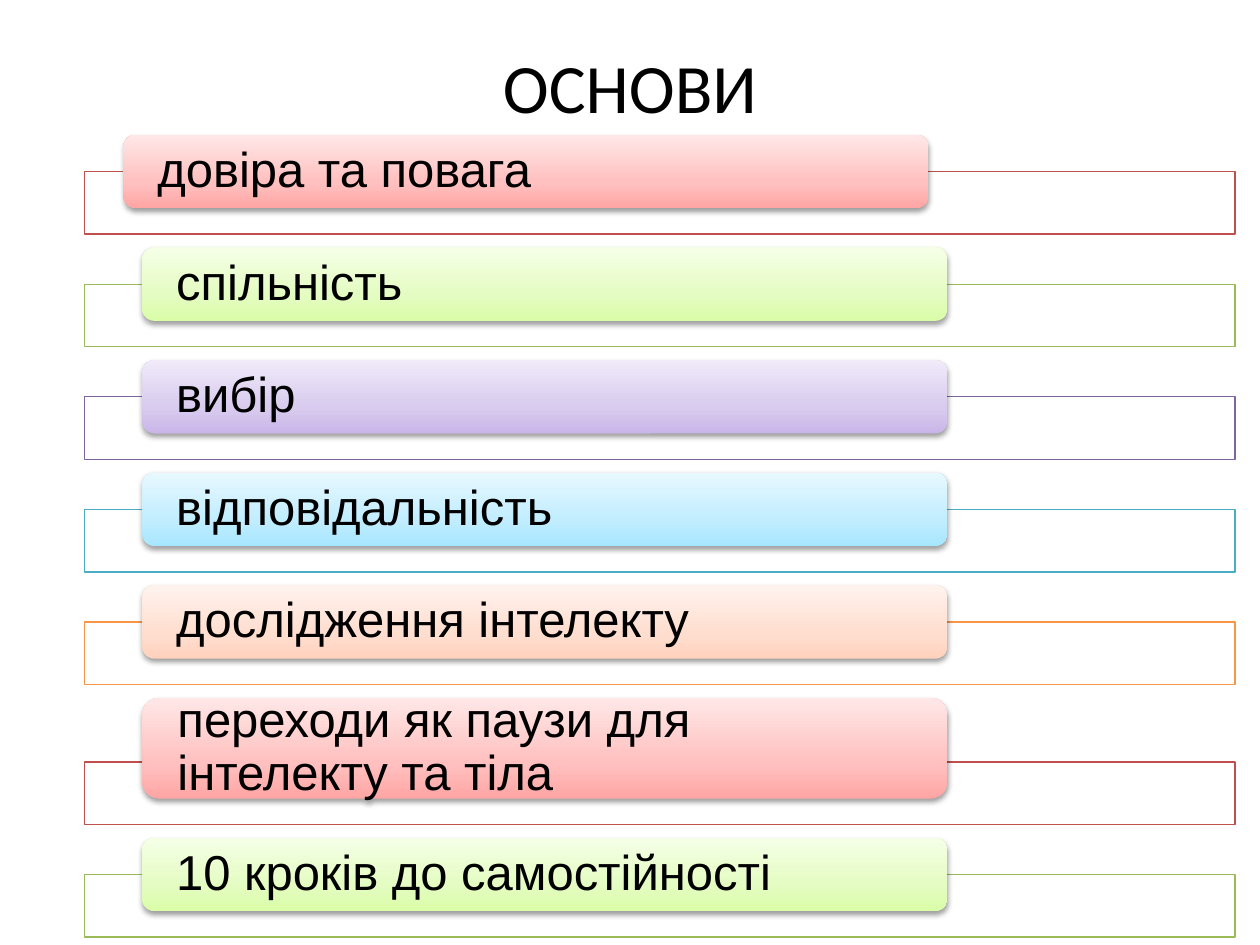
from copy import deepcopy

from lxml import etree
from pptx import Presentation
from pptx.dml.color import RGBColor
from pptx.enum.shapes import MSO_SHAPE
from pptx.enum.text import MSO_ANCHOR, PP_ALIGN
from pptx.oxml.ns import qn
from pptx.util import Cm, Pt

RECTANGLE = MSO_SHAPE.RECTANGLE
ROUNDED = MSO_SHAPE.ROUNDED_RECTANGLE
MIDDLE = MSO_ANCHOR.MIDDLE
LEFT, CENTER = PP_ALIGN.LEFT, PP_ALIGN.CENTER

COLORS = {
    "text": "000000",
    "frame": "FFFFFF",
    "shadow": "000000",
    "red": ("C0504D", "FFA6A5", "FFC0BF", "FFE7E7"),
    "green": ("9BBB59", "DAFDA7", "E4FCC2", "F5FFE7"),
    "purple": ("8064A2", "C9B5E8", "D8CBEE", "F0EAF9"),
    "blue": ("4BACC6", "A7E6FF", "C1EDFF", "E7F8FF"),
    "orange": ("F79646", "FFD2BD", "FFDED0", "FFF2ED"),
}
STOP_POSITIONS = (0, 0.35, 1)

PILL_WIDTH, PILL_HEIGHT, TALL_PILL_HEIGHT = 16.23, 1.48, 2.03
FIRST_INDENT, INDENT = 0.79, 1.17
FRAME_HEIGHT, OVERLAP, GAP = 1.26, 0.74, 0.27

PRINCIPLES = [
    ("довіра та повага", "red", FIRST_INDENT, PILL_HEIGHT),
    ("спільність", "green", INDENT, PILL_HEIGHT),
    ("вибір", "purple", INDENT, PILL_HEIGHT),
    ("відповідальність", "blue", INDENT, PILL_HEIGHT),
    ("дослідження інтелекту", "orange", INDENT, PILL_HEIGHT),
    ("переходи як паузи для інтелекту та тіла", "red", INDENT, TALL_PILL_HEIGHT),
    ("10 кроків до самостійності", "green", INDENT, PILL_HEIGHT),
]


def write_text(shape, text, font, size, align=LEFT, spacing=1.0, side=0.25, edge=0.25):
    frame = shape.text_frame
    frame.word_wrap = True
    frame.vertical_anchor = MIDDLE
    frame.margin_left = frame.margin_right = Cm(side)
    frame.margin_top = frame.margin_bottom = Cm(edge)
    paragraph = frame.paragraphs[0]
    paragraph.alignment = align
    paragraph.line_spacing = spacing
    run = paragraph.add_run()
    run.text = text
    run.font.name = font
    run.font.size = Pt(size)
    run.font.color.rgb = RGBColor.from_string(COLORS["text"])


def add_color(parent, color, percent):
    node = etree.SubElement(parent, qn("a:srgbClr"), val=color)
    etree.SubElement(node, qn("a:alpha"), val=str(percent * 1000))


def fill_gradient(shape, colors):
    shape.fill.gradient()
    shape.fill.gradient_angle = 90
    stop_list = shape._element.spPr.find(".//" + qn("a:gsLst"))
    stop_list.insert(1, deepcopy(stop_list[0]))
    for stop, position, color in zip(shape.fill.gradient_stops, STOP_POSITIONS, colors):
        stop.position = position
        stop.color.rgb = RGBColor.from_string(color)


def add_shadow(shape):
    shape.shadow.inherit = False
    effects = shape._element.spPr.find(qn("a:effectLst"))
    shadow = etree.SubElement(
        effects, qn("a:outerShdw"), blurRad=str(Pt(3.1)), dist=str(Pt(1.6)),
        dir="5400000", rotWithShape="0")
    add_color(shadow, COLORS["shadow"], 38)


def add_frame(slide, left, top, width, height, line_color):
    shape = slide.shapes.add_shape(RECTANGLE, Cm(left), Cm(top), Cm(width), Cm(height))
    shape.shadow.inherit = False
    shape.fill.solid()
    shape.fill.fore_color.rgb = RGBColor.from_string(COLORS["frame"])
    solid = shape._element.spPr.find(qn("a:solidFill"))
    solid.clear()
    add_color(solid, COLORS["frame"], 90)
    shape.line.color.rgb = RGBColor.from_string(line_color)
    shape.line.width = Pt(0.75)


def add_pill(slide, left, top, width, height, text, colors):
    shape = slide.shapes.add_shape(ROUNDED, Cm(left), Cm(top), Cm(width), Cm(height))
    shape.line.fill.background()
    fill_gradient(shape, colors)
    add_shadow(shape)
    write_text(shape, text, "Arial", 28, spacing=0.9, side=0.61, edge=0)


def add_title(slide, left, top, width, height):
    shape = slide.shapes.add_textbox(Cm(left), Cm(top), Cm(width), Cm(height))
    write_text(shape, "ОСНОВИ", "Calibri", 39.6, align=CENTER)


def add_principles(slide, left, top, width):
    for text, color, indent, height in PRINCIPLES:
        line_color, *gradient = COLORS[color]
        frame_top = top + height - OVERLAP
        add_frame(slide, left, frame_top, width, FRAME_HEIGHT, line_color)
        add_pill(slide, left + indent, top, PILL_WIDTH, height, text, gradient)
        top = frame_top + FRAME_HEIGHT + GAP


def main():
    presentation = Presentation()
    presentation.slide_width, presentation.slide_height = Cm(25.4), Cm(19.05)
    slide = presentation.slides.add_slide(presentation.slide_layouts[6])
    add_title(slide, 1.27, 0.76, 22.86, 1.96)
    add_principles(slide, 1.7, 2.72, 23.2)
    presentation.save("out.pptx")


if __name__ == "__main__":
    main()
